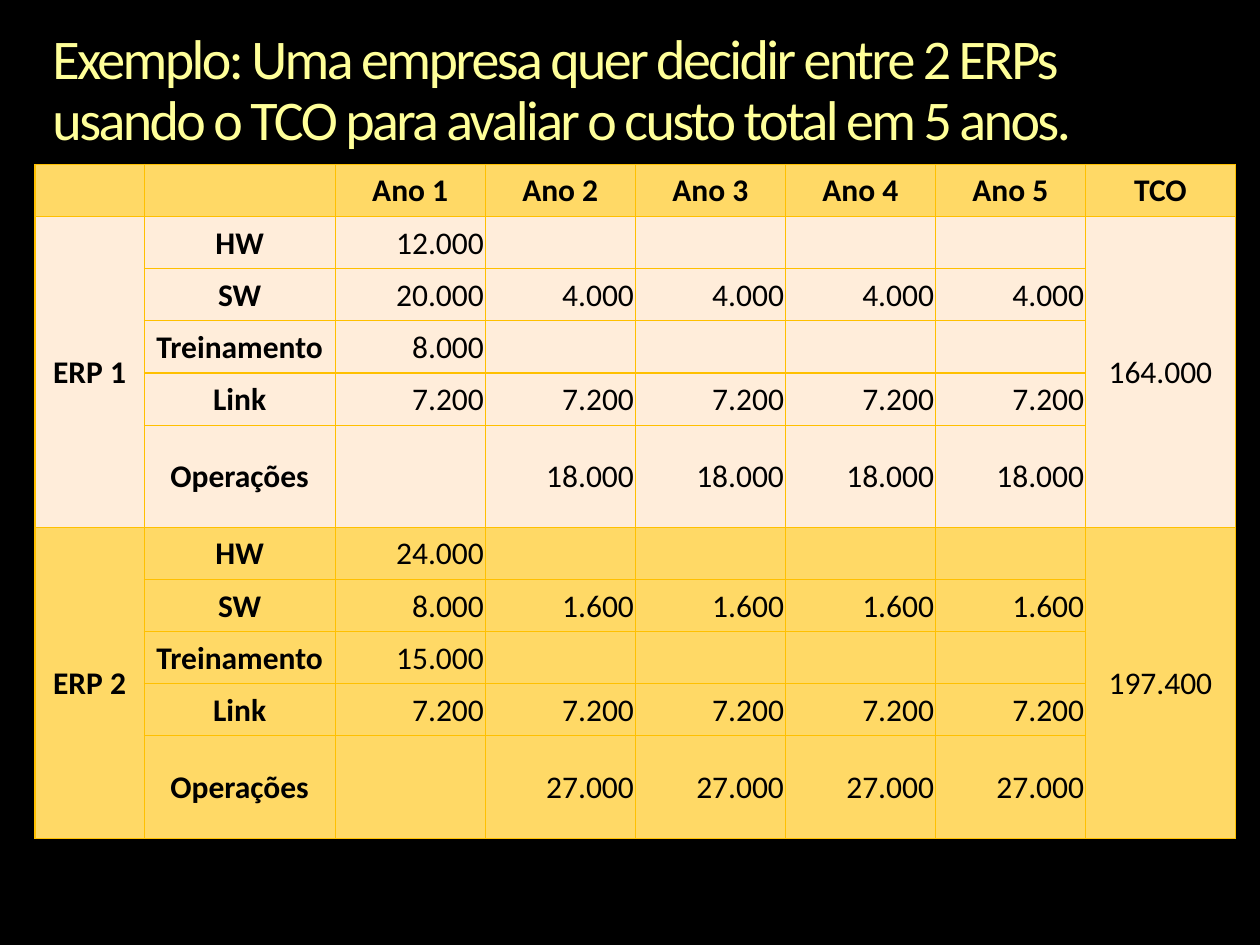
from lxml.etree import SubElement
from pptx import Presentation
from pptx.dml.color import RGBColor
from pptx.enum.text import MSO_ANCHOR as Anchor, MSO_AUTO_SIZE as AutoSize, PP_ALIGN as Align
from pptx.oxml.ns import qn
from pptx.util import Pt

BLACK = RGBColor(0x00, 0x00, 0x00)
TITLE_YELLOW = RGBColor(0xFF, 0xFF, 0x99)
GOLD = RGBColor(0xFF, 0xD9, 0x66)
CREAM = RGBColor(0xFF, 0xED, 0xDA)
BORDER = RGBColor(0xFF, 0xC0, 0x00)

FONT = "Calibri"
TITLE = "Exemplo: Uma empresa quer decidir entre 2 ERPs usando o TCO para avaliar o custo total em 5 anos."
YEARS = 5
COLUMN_WIDTHS = [62.4, 109.2] + [85.8] * (YEARS + 1)
ROW_HEIGHT = 29.8
TALL_ROW_HEIGHT = 58.4

SYSTEMS = [
    ("ERP 1", "164.000", CREAM, [
        ("HW", "12.000", ""),
        ("SW", "20.000", "4.000"),
        ("Treinamento", "8.000", ""),
        ("Link", "7.200", "7.200"),
        ("Operações", "", "18.000"),
    ]),
    ("ERP 2", "197.400", GOLD, [
        ("HW", "24.000", ""),
        ("SW", "8.000", "1.600"),
        ("Treinamento", "15.000", ""),
        ("Link", "7.200", "7.200"),
        ("Operações", "", "27.000"),
    ]),
]


def write_text(paragraph, text, size=18, color=BLACK, bold=False, align=Align.CENTER, spacing=None):
    paragraph.alignment = align
    run = paragraph.add_run()
    run.text = text
    run.font.name = FONT
    run.font.size = Pt(size)
    run.font.bold = bold
    run.font.color.rgb = color
    if spacing is not None:
        run.font._element.set("spc", str(int(spacing * 100)))


def add_borders(cell):
    properties = cell._tc.get_or_add_tcPr()
    for side in ("a:lnL", "a:lnR", "a:lnT", "a:lnB"):
        line = SubElement(properties, qn(side), w=str(Pt(0.75)))
        fill = SubElement(line, qn("a:solidFill"))
        SubElement(fill, qn("a:srgbClr"), val=str(BORDER))


def format_cell(cell, text, fill, **text_format):
    add_borders(cell)
    cell.fill.solid()
    cell.fill.fore_color.rgb = fill
    cell.vertical_anchor = Anchor.MIDDLE
    cell.margin_left = cell.margin_right = cell.margin_top = Pt(0.75)
    cell.margin_bottom = 0
    if text:
        write_text(cell.text_frame.paragraphs[0], text, **text_format)


def place_title(slide, left, top, width, height):
    title = slide.shapes.title
    title.left, title.top, title.width, title.height = Pt(left), Pt(top), Pt(width), Pt(height)
    frame = title.text_frame
    frame.word_wrap = True
    frame.auto_size = AutoSize.NONE
    frame.vertical_anchor = Anchor.TOP
    frame.margin_left = frame.margin_right = frame.margin_top = frame.margin_bottom = 0
    paragraph = frame.paragraphs[0]
    paragraph.line_spacing = 0.9
    paragraph.space_before = Pt(0)
    write_text(paragraph, TITLE, size=32, color=TITLE_YELLOW, align=Align.LEFT, spacing=-1.5)


def fill_system(table, first_row, name, total, fill, costs):
    last_row = first_row + len(costs) - 1
    last_column = len(COLUMN_WIDTHS) - 1
    for row, (label, first_year, later_years) in enumerate(costs, first_row):
        is_first = row == first_row
        format_cell(table.cell(row, 0), name if is_first else "", fill, bold=True)
        format_cell(table.cell(row, 1), label, fill, bold=True)
        for column, value in enumerate([first_year] + [later_years] * (YEARS - 1), 2):
            format_cell(table.cell(row, column), value, fill, align=Align.RIGHT)
        format_cell(table.cell(row, last_column), total if is_first else "", fill)
    table.rows[last_row].height = Pt(TALL_ROW_HEIGHT)
    for column in (0, last_column):
        table.cell(first_row, column).merge(table.cell(last_row, column))


def place_cost_table(slide, left, top, width, height):
    row_count = 1 + sum(len(costs) for *_, costs in SYSTEMS)
    table = slide.shapes.add_table(
        row_count, len(COLUMN_WIDTHS), Pt(left), Pt(top), Pt(width), Pt(height)
    ).table
    for column, column_width in zip(table.columns, COLUMN_WIDTHS):
        column.width = Pt(column_width * width / sum(COLUMN_WIDTHS))
    for row in table.rows:
        row.height = Pt(ROW_HEIGHT)
    headings = ["", ""] + [f"Ano {year}" for year in range(1, YEARS + 1)] + ["TCO"]
    for column, heading in enumerate(headings):
        format_cell(table.cell(0, column), heading, GOLD, bold=True)
    first_row = 1
    for name, total, fill, costs in SYSTEMS:
        fill_system(table, first_row, name, total, fill, costs)
        first_row += len(costs)


def main():
    presentation = Presentation()
    presentation.slide_width, presentation.slide_height = Pt(720), Pt(540)
    slide = presentation.slides.add_slide(presentation.slide_layouts[5])
    slide.background.fill.solid()
    slide.background.fill.fore_color.rgb = BLACK
    place_title(slide, 30, 18, 660, 70)
    place_cost_table(slide, 20, 94, 686, 385)
    presentation.save("out.pptx")


if __name__ == "__main__":
    main()
